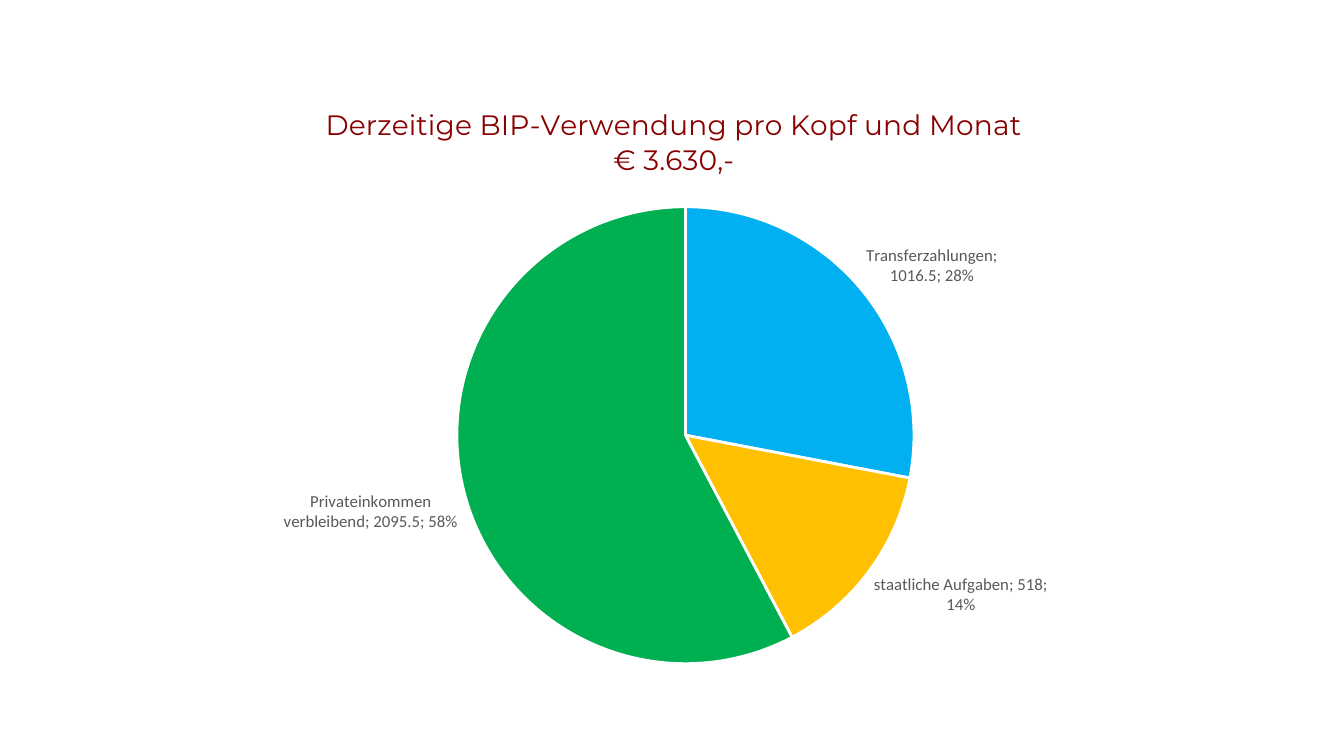
import pptx
import pptx.chart.data
import pptx.dml.color
import pptx.enum.chart
import pptx.enum.text
import pptx.oxml
import pptx.oxml.ns
import pptx.util

EMU_PER_PX = 9144
COLORS = {
    "background": "FFFFFF",
    "title": "880000",
    "label": "595959",
    "transfers": "00B0F0",
    "state": "FFC000",
    "private": "00B050",
}
SHARES = [
    ("Transferzahlungen", 1016.5, "transfers"),
    ("staatliche Aufgaben", 518, "state"),
    ("Privateinkommen verbleibend", 2095.5, "private"),
]
TITLE_LINES = ["Derzeitige BIP-Verwendung pro Kopf und Monat", "€ 3.630,-"]


def px(length):
    """Turn a length in px into EMU."""
    return pptx.util.Emu(length * EMU_PER_PX)


def color(name):
    """Return a named colour."""
    return pptx.dml.color.RGBColor.from_string(COLORS[name])


def format_font(font, *, name, size, color_name):
    """Set typeface, size and colour of a font."""
    font.name = name
    font.size = pptx.util.Pt(size)
    font.bold = False
    font.color.rgb = color(color_name)


def write_text(text_frame, lines, **font_format):
    """Write centred lines, one paragraph each."""
    for index, line in enumerate(lines):
        paragraph = text_frame.paragraphs[0] if index == 0 else text_frame.add_paragraph()
        paragraph.alignment = pptx.enum.text.PP_ALIGN.CENTER
        run = paragraph.add_run()
        run.text = line
        format_font(run.font, **font_format)


def set_layout(element, following, **fractions):
    """Place a chart part by fractions of the chart box."""
    for old_layout in element.findall(pptx.oxml.ns.qn("c:layout")):
        element.remove(old_layout)
    target = '<c:layoutTarget val="inner"/>' if "w" in fractions else ""
    modes = "".join(f'<c:{key}Mode val="edge"/>' for key in "xy")
    values = "".join(f'<c:{key} val="{value}"/>' for key, value in fractions.items())
    layout = pptx.oxml.parse_xml(
        f'<c:layout {pptx.oxml.ns.nsdecls("c")}><c:manualLayout>'
        f"{target}{modes}{values}</c:manualLayout></c:layout>"
    )
    element.find(pptx.oxml.ns.qn(following)).addprevious(layout)


def add_labels(plot):
    """Show category, value and percentage outside the slices."""
    plot.has_data_labels = True
    labels = plot.data_labels
    labels.show_category_name = True
    labels.show_value = True
    labels.show_percentage = True
    labels.number_format = "General"
    labels.number_format_is_linked = False
    labels.position = pptx.enum.chart.XL_LABEL_POSITION.OUTSIDE_END
    format_font(labels.font, name="Calibri", size=12, color_name="label")
    separator = pptx.oxml.parse_xml(
        f'<c:separator {pptx.oxml.ns.nsdecls("c")}>; </c:separator>'
    )
    labels._element.find(pptx.oxml.ns.qn("c:showBubbleSize")).addnext(separator)


def add_spending_pie(slide, left, top, width, height):
    """Draw the pie of monthly spending in the given box."""
    data = pptx.chart.data.CategoryChartData()
    data.categories = [name for name, _, _ in SHARES]
    data.add_series("Series 1", [value for _, value, _ in SHARES])
    chart = slide.shapes.add_chart(
        pptx.enum.chart.XL_CHART_TYPE.PIE,
        px(left), px(top), px(width), px(height), data,
    ).chart
    chart.has_legend = False
    chart.font.name = "Calibri"
    chart.font.size = pptx.util.Pt(10)

    chart.has_title = True
    title = chart.chart_title
    write_text(title.text_frame, TITLE_LINES, name="Montserrat", size=20, color_name="title")
    title.include_in_layout = False
    set_layout(title._element, "c:overlay", x=0.11, y=0.04)

    plot = chart.plots[0]
    plot.vary_by_categories = True
    set_layout(plot._element.getparent(), "c:pieChart", x=0.26, y=0.21, w=0.51, h=0.77)
    for index, (_, _, color_name) in enumerate(SHARES):
        slice_format = plot.series[0].points[index].format
        slice_format.fill.solid()
        slice_format.fill.fore_color.rgb = color(color_name)
        slice_format.line.color.rgb = color("background")
        slice_format.line.width = pptx.util.Pt(2)
    add_labels(plot)


def main():
    """Build and save the slide."""
    presentation = pptx.Presentation()
    presentation.slide_width = px(1333)
    presentation.slide_height = px(750)
    slide = presentation.slides.add_slide(presentation.slide_layouts[6])
    add_spending_pie(slide, 222, 79, 889, 593)
    presentation.save("out.pptx")


if __name__ == "__main__":
    main()
